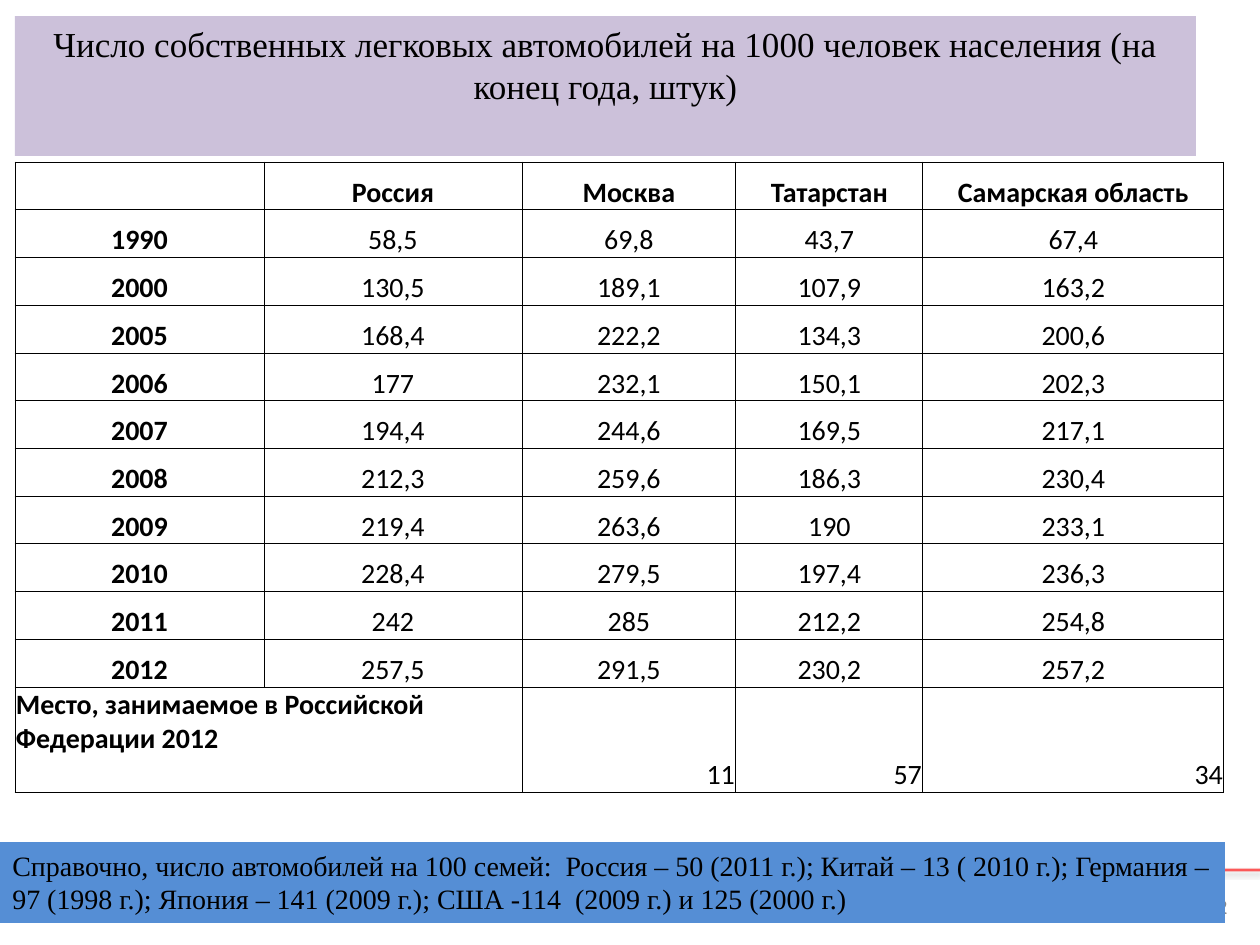
from dataclasses import dataclass
from lxml.etree import SubElement
from pptx import Presentation
from pptx.dml.color import RGBColor as RGB
from pptx.enum.shapes import MSO_CONNECTOR as Link, MSO_SHAPE as Form
from pptx.enum.text import MSO_ANCHOR as Anchor, MSO_AUTO_SIZE as Fit, PP_ALIGN as Align
from pptx.oxml import parse_xml
from pptx.oxml.ns import nsdecls, qn
from pptx.util import Emu, Pt


@dataclass(frozen=True)
class Theme:
    ink: str = "000000"
    grey: str = "898989"
    rule: str = "FF0000"
    lilac: str = "CCC1DA"
    blue: str = "558ED5"
    serif: str = "Times New Roman"
    sans: str = "Calibri"
    head: int = 20
    text: int = 16
    small: int = 12


@dataclass(frozen=True)
class Box:
    left: int
    top: int
    wide: int
    high: int


@dataclass(frozen=True)
class Entry:
    text: str
    bold: bool = False
    align: Align = Align.CENTER
    anchor: Anchor = Anchor.BOTTOM


T = Theme()
SCALE = 914400 / 126
WIDE, HIGH = 1260, 945
TITLE = "Число собственных легковых автомобилей на 1000 человек населения (на конец года, штук)"
NOTE = ("Справочно, число автомобилей на 100 семей:  Россия – 50 (2011 г.); "
        "Китай – 13 ( 2010 г.); Германия – 97 (1998 г.); Япония – 141 (2009 г.); "
        "США -114  (2009 г.) и 125 (2000 г.)")
HEADS = ["", "Россия", "Москва", "Татарстан", "Самарская область"]
YEARS = [
    ("1990", "58,5", "69,8", "43,7", "67,4"),
    ("2000", "130,5", "189,1", "107,9", "163,2"),
    ("2005", "168,4", "222,2", "134,3", "200,6"),
    ("2006", "177", "232,1", "150,1", "202,3"),
    ("2007", "194,4", "244,6", "169,5", "217,1"),
    ("2008", "212,3", "259,6", "186,3", "230,4"),
    ("2009", "219,4", "263,6", "190", "233,1"),
    ("2010", "228,4", "279,5", "197,4", "236,3"),
    ("2011", "242", "285", "212,2", "254,8"),
    ("2012", "257,5", "291,5", "230,2", "257,2"),
]
PLACE = "Место, занимаемое в Российской Федерации 2012"
RANKS = ["11", "57", "34"]
COLS = [249, 258, 214, 187, 301]
BODY, LAST = 525, 105  # height of the equal rows, height of the rank row


def px(n: float) -> Emu:
    return Emu(round(n * SCALE))


def area(box: Box) -> tuple:
    return px(box.left), px(box.top), px(box.wide), px(box.high)


def write(frame, text: str, font: str, size: int, color: str = T.ink,
          bold: bool = False, align: Align = Align.LEFT) -> None:
    para = frame.paragraphs[0]
    para.alignment = align
    run = para.add_run()
    run.text = text
    run.font.name, run.font.size, run.font.bold = font, Pt(size), bold
    run.font.color.rgb = RGB.from_string(color)


def paint(shape, color: str) -> None:
    shape.fill.solid()
    shape.fill.fore_color.rgb = RGB.from_string(color)
    shape.line.fill.background()


def frame_of(shape, anchor: Anchor):
    frame = shape.text_frame
    frame.word_wrap, frame.auto_size = True, Fit.NONE
    frame.vertical_anchor = anchor
    return frame


def border(cell) -> None:
    props = cell._tc.get_or_add_tcPr()
    for i, side in enumerate(("lnL", "lnR", "lnT", "lnB")):
        props.insert(i, parse_xml(
            f'<a:{side} {nsdecls("a")} w="{Pt(0.5)}"><a:solidFill>'
            f'<a:srgbClr val="{T.ink}"/></a:solidFill></a:{side}>'))


def fill_cell(cell, entry: Entry) -> None:
    cell.margin_left = cell.margin_right = cell.margin_top = px(1)
    cell.margin_bottom = 0
    cell.vertical_anchor = entry.anchor
    cell.fill.background()
    border(cell)
    if entry.text:
        write(cell.text_frame, entry.text, T.sans, T.text,
              bold=entry.bold, align=entry.align)


def add_rule(slide, y: int) -> None:
    line = slide.shapes.add_connector(Link.STRAIGHT, 0, px(y), px(WIDE), px(y))
    line.line.width = Pt(1.5)
    line.line.color.rgb = RGB.from_string(T.rule)
    tone = line.line._ln.find(".//" + qn("a:srgbClr"))
    SubElement(tone, qn("a:alpha"), val="64000")
    line._element.spPr.append(parse_xml(
        f'<a:effectLst {nsdecls("a")}><a:outerShdw blurRad="{Pt(3.1)}" '
        f'dist="{Pt(1.6)}" dir="5400000" rotWithShape="0"><a:srgbClr val="{T.ink}">'
        '<a:alpha val="38000"/></a:srgbClr></a:outerShdw></a:effectLst>'))


def add_grid(slide, left: int, top: int) -> None:
    rows = [[Entry(h, True) for h in HEADS]]
    rows += [[Entry(v, i == 0) for i, v in enumerate(year)] for year in YEARS]
    rows.append([Entry(PLACE, True, Align.LEFT, Anchor.TOP), Entry("")]
                + [Entry(r, align=Align.RIGHT) for r in RANKS])
    box = Box(left, top, sum(COLS), BODY + LAST)
    grid = slide.shapes.add_table(len(rows), len(COLS), *area(box)).table
    grid.first_row = grid.horz_banding = False
    for col, wide in zip(grid.columns, COLS):
        col.width = px(wide)
    for row in grid.rows:
        row.height = px(BODY / (len(rows) - 1))
    end = len(rows) - 1
    grid.rows[end].height = px(LAST)
    grid.cell(end, 0).merge(grid.cell(end, 1))
    for r, row in enumerate(rows):
        for c, entry in enumerate(row):
            fill_cell(grid.cell(r, c), entry)


def main() -> None:
    deck = Presentation()
    deck.slide_width, deck.slide_height = px(WIDE), px(HIGH)
    slide = deck.slides.add_slide(deck.slide_layouts[5])

    # Title band
    title = slide.shapes.title
    title.left, title.top, title.width, title.height = area(Box(15, 16, 1181, 140))
    paint(title, T.lilac)
    write(frame_of(title, Anchor.TOP), TITLE, T.serif, T.head, align=Align.CENTER)

    # Footer rule and page number
    add_rule(slide, 870)
    page = slide.shapes.add_textbox(*area(Box(1176, 881, 64, 50)))
    write(frame_of(page, Anchor.MIDDLE), "22", T.sans, T.small, T.grey,
          align=Align.RIGHT)

    # Cars by region and year
    add_grid(slide, 15, 162)

    # Reference note
    note = slide.shapes.add_shape(Form.RECTANGLE, *area(Box(0, 842, 1225, 81)))
    note.shadow.inherit = False
    paint(note, T.blue)
    write(frame_of(note, Anchor.TOP), NOTE, T.serif, T.text)

    deck.save("out.pptx")


if __name__ == "__main__":
    main()
